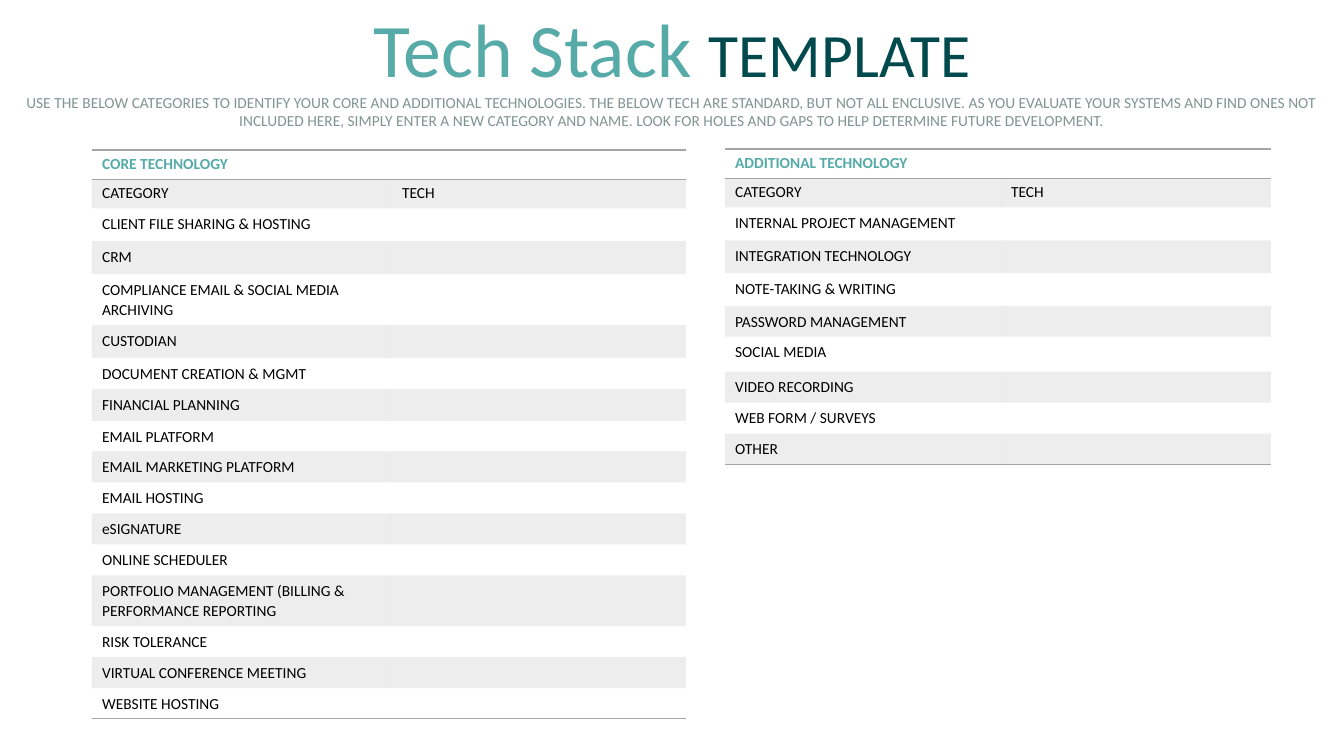
from lxml import etree
from pptx import Presentation
from pptx import util as u
from pptx.dml.color import RGBColor
from pptx.enum import text
from pptx.oxml.ns import qn

COLORS = {"teal": "56ABA8", "dark": "004A4D", "muted": "819494",
          "black": "000000", "grey": "A5A5A5"}
PX = 914400 / 100.8
PLAIN_TABLE = "{2D5ABB26-0587-4C30-8999-92F81FD0307C}"
CORE = [
    ("CLIENT FILE SHARING & HOSTING", 33), ("CRM", 33),
    ("COMPLIANCE EMAIL & SOCIAL MEDIA ARCHIVING", 49), ("CUSTODIAN", 33),
    ("DOCUMENT CREATION & MGMT", 31), ("FINANCIAL PLANNING", 32),
    ("EMAIL PLATFORM", 30), ("EMAIL MARKETING PLATFORM", 31),
    ("EMAIL HOSTING", 31), ("eSIGNATURE", 31), ("ONLINE SCHEDULER", 31),
    ("PORTFOLIO MANAGEMENT (BILLING & PERFORMANCE REPORTING", 50),
    ("RISK TOLERANCE", 31), ("VIRTUAL CONFERENCE MEETING", 31),
    ("WEBSITE HOSTING", 29),
]
ADDITIONAL = [
    ("INTERNAL PROJECT MANAGEMENT", 33), ("INTEGRATION TECHNOLOGY", 33),
    ("NOTE-TAKING & WRITING", 33), ("PASSWORD MANAGEMENT", 30),
    ("SOCIAL MEDIA", 35), ("VIDEO RECORDING", 31),
    ("WEB FORM / SURVEYS", 31), ("OTHER", 31),
]
GUIDANCE = (
    "USE THE BELOW CATEGORIES TO IDENTIFY YOUR CORE AND ADDITIONAL TECHNOLOGIES. "
    "THE BELOW TECH ARE STANDARD, BUT NOT ALL ENCLUSIVE. AS YOU EVALUATE YOUR "
    "SYSTEMS AND FIND ONES NOT INCLUDED HERE, SIMPLY ENTER A NEW CATEGORY AND NAME. "
    "LOOK FOR HOLES AND GAPS TO HELP DETERMINE FUTURE DEVELOPMENT.")


def px(value):
    """Turn whole pixels into EMU."""
    return u.Emu(round(value * PX))


class TechStackSlide:
    """Holds the style and the current slide."""

    def __init__(self, slide, font="Calibri", size=11):
        """Keep the slide and its base text style."""
        self.slide, self.font, self.size = slide, font, size

    def run(self, paragraph, words, color, size=None, bold=False):
        """Add one styled run."""
        run = paragraph.add_run()
        run.text = words
        run.font.name, run.font.size = self.font, u.Pt(size or self.size)
        run.font.bold = bold
        run.font.color.rgb = RGBColor.from_string(COLORS[color])

    def heading(self, left, top, width, height, lines):
        """Fill the title placeholder with centred lines of runs."""
        title = self.slide.shapes.title
        title.left, title.top, title.width, title.height = map(px, (left, top, width, height))
        frame = title.text_frame
        frame.word_wrap = True
        frame.auto_size = text.MSO_AUTO_SIZE.NONE
        frame.vertical_anchor = text.MSO_ANCHOR.TOP
        for index, runs in enumerate(lines):
            paragraph = frame.add_paragraph() if index else frame.paragraphs[0]
            paragraph.alignment = text.PP_ALIGN.CENTER
            for words, color, size in runs:
                self.run(paragraph, words, color, size)

    def border(self, cell, side):
        """Draw a thin grey border on one side of a cell."""
        line = etree.SubElement(cell._tc.get_or_add_tcPr(), qn("a:ln" + side), w="12700")
        fill = etree.SubElement(line, qn("a:solidFill"))
        etree.SubElement(fill, qn("a:srgbClr"), val=COLORS["grey"])

    def shade(self, cell, shaded):
        """Give a cell a translucent grey fill or none."""
        if not shaded:
            cell.fill.background()
            return
        cell.fill.solid()
        cell.fill.fore_color.rgb = RGBColor.from_string(COLORS["grey"])
        color = cell._tc.tcPr.find(".//" + qn("a:solidFill") + "[last()]/" + qn("a:srgbClr"))
        color = cell._tc.tcPr.find(qn("a:solidFill")).find(qn("a:srgbClr"))
        etree.SubElement(color, qn("a:alpha"), val="20000")

    def table(self, left, top, columns, name, items):
        """Add a two-column technology table."""
        rows = [((name, ""), 29), (("CATEGORY", "TECH"), 29)]
        rows += [((category, ""), height) for category, height in items]
        total = sum(height for _, height in rows)
        frame = self.slide.shapes.add_table(
            len(rows), 2, px(left), px(top), px(sum(columns)), px(total))
        table = frame.table
        table.first_row = table.horz_banding = False
        table._tbl.tblPr.find(qn("a:tableStyleId")).text = PLAIN_TABLE
        for column, width in zip(table.columns, columns):
            column.width = px(width)
        table.cell(0, 0).merge(table.cell(0, 1))
        for index, (values, height) in enumerate(rows):
            table.rows[index].height = px(height)
            sides = "TB" if index == 0 else "B" if index == len(rows) - 1 else ""
            for column, words in enumerate(values):
                cell = table.cell(index, column)
                for side in sides:
                    self.border(cell, side)
                self.shade(cell, index % 2 == 1)
                self.cell_text(cell, words, index)

    def cell_text(self, cell, words, index):
        """Write a cell, keeping an empty one at the base size."""
        paragraph = cell.text_frame.paragraphs[0]
        if not words:
            etree.SubElement(paragraph._p, qn("a:endParaRPr"), sz=str(self.size * 100))
            return
        if index > 1:
            paragraph.line_spacing, paragraph.space_after = 1.07, u.Pt(8)
        self.run(paragraph, words, "black" if index else "teal", bold=index == 0)


def main():
    """Build and save the tech stack slide."""
    presentation = Presentation()
    presentation.slide_width, presentation.slide_height = px(1344), px(756)
    slide = presentation.slides.add_slide(presentation.slide_layouts[5])
    page = TechStackSlide(slide)
    page.table(92, 150, (300, 294), "CORE TECHNOLOGY", CORE)
    page.table(725, 149, (276, 270), "ADDITIONAL TECHNOLOGY", ADDITIONAL)
    page.heading(0, -3, 1344, 139, [
        [("Tech Stack ", "teal", 54), ("TEMPLATE", "dark", 44)],
        [(GUIDANCE, "muted", 11)],
    ])
    presentation.save("out.pptx")


if __name__ == "__main__":
    main()
